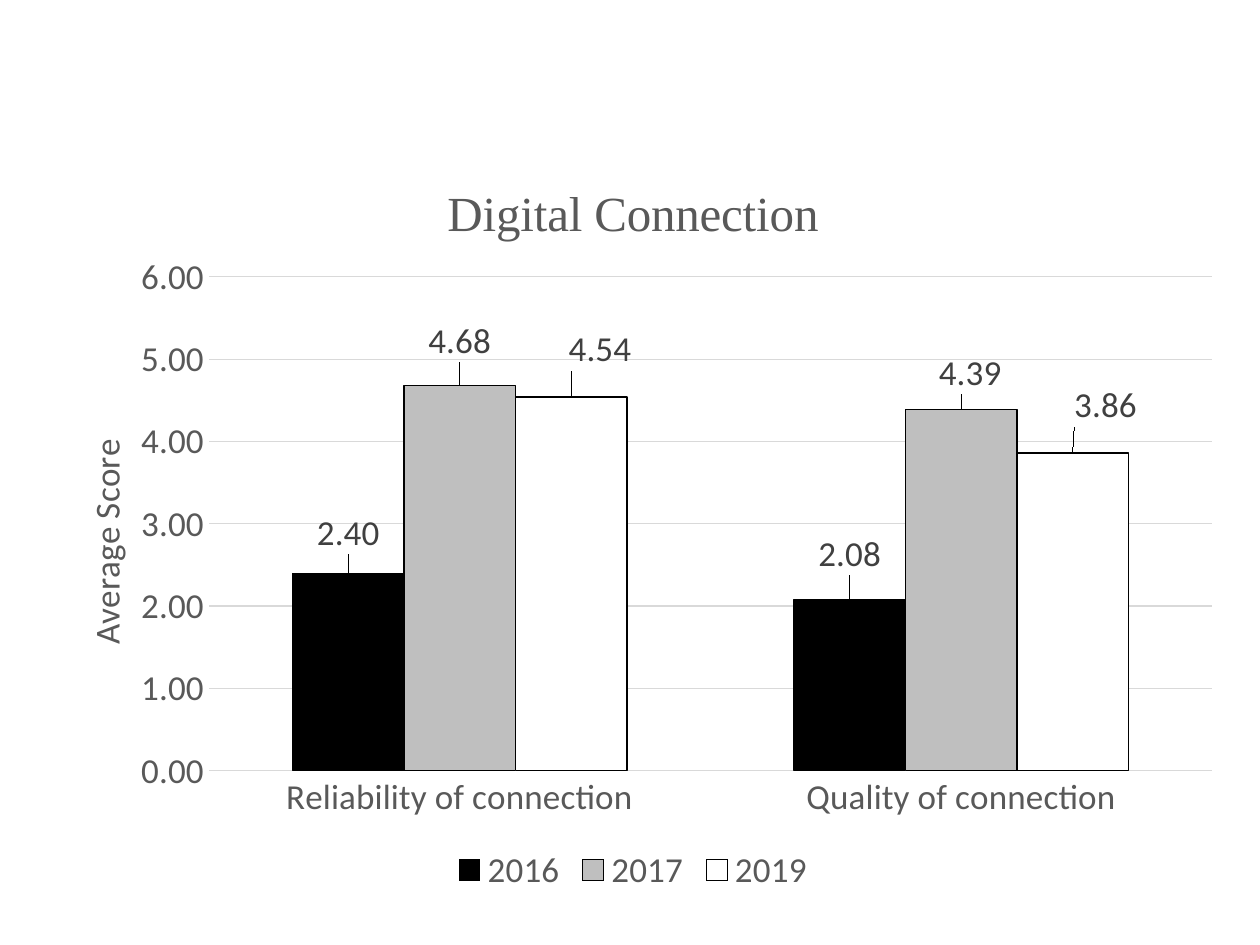
from dataclasses import dataclass

from pptx import Presentation
from pptx.chart.data import CategoryChartData
from pptx.dml.color import RGBColor
from pptx.enum.chart import XL_CHART_TYPE as ChartType
from pptx.enum.chart import XL_LABEL_POSITION as LabelPosition
from pptx.enum.chart import XL_LEGEND_POSITION as LegendPosition
from pptx.enum.chart import XL_TICK_MARK as TickMark
from pptx.oxml import parse_xml
from pptx.oxml.ns import nsdecls, qn
from pptx.util import Pt

PX = 914400 // 126


@dataclass(frozen=True)
class Theme:
    """Colours, fonts and type sizes of the slide."""
    text: str = "595959"
    label: str = "404040"
    grid: str = "D9D9D9"
    outline: str = "000000"
    bars: tuple = ("000000", "BFBFBF", "FFFFFF")
    body_font: str = "Calibri"
    title_font: str = "Times New Roman"
    body_size: int = 20
    title_size: int = 28
    line_width: float = 0.75


THEME = Theme()
CATEGORIES = ("Reliability of connection", "Quality of connection")
SCORES = {"2016": (2.40, 2.08), "2017": (4.68, 4.39), "2019": (4.54, 3.86)}
LABEL_SHIFTS = {
    "2016": ((0, -14), (0, -19)),
    "2017": ((0, -18), (9, -10)),
    "2019": ((29, -21), (33, -21)),
}


def style_font(font, color=THEME.text, size=THEME.body_size, name=THEME.body_font):
    """Give a font its regular weight, size, face and colour."""
    font.size, font.name, font.bold = Pt(size), name, False
    font.color.rgb = RGBColor.from_string(color)


def style_line(line, color):
    """Give a line its colour and the common width."""
    line.color.rgb = RGBColor.from_string(color)
    line.width = Pt(THEME.line_width)


def set_layout(part, index, box, left, top, size=None, inner=False):
    """Place a chart part by px lengths relative to the chart box."""
    for layout in part.findall(qn("c:layout")):
        part.remove(layout)
    width, height = box[2:]
    settings = [("layoutTarget", "inner")] if inner else []
    if part.tag != qn("c:dLbl"):
        settings += [("xMode", "edge"), ("yMode", "edge")]
    settings += [("x", round(left / width, 4)), ("y", round(top / height, 4))]
    if size:
        settings += [("w", round(size[0] / width, 4)), ("h", round(size[1] / height, 4))]
    body = "".join(f'<c:{key} val="{value}"/>' for key, value in settings)
    part.insert(index, parse_xml(
        f'<c:layout {nsdecls("c")}><c:manualLayout>{body}</c:manualLayout></c:layout>'))


def style_axes(chart, box):
    """Format both axes, the gridlines and the score title."""
    categories, scores = chart.category_axis, chart.value_axis
    for axis in (categories, scores):
        axis.major_tick_mark = axis.minor_tick_mark = TickMark.NONE
        axis.format.line.fill.background()
        style_font(axis.tick_labels.font)
    scores.minimum_scale, scores.maximum_scale, scores.major_unit = 0, 6, 1
    scores.tick_labels.number_format = "0.00"
    scores.tick_labels.number_format_is_linked = False
    style_line(scores.major_gridlines.format.line, THEME.grid)
    heading = scores.axis_title.text_frame
    heading.text = "Average Score"
    style_font(heading.paragraphs[0].font)
    set_layout(scores.axis_title._element, 1, box, 45, 281)


def style_series(series, color, shifts, box):
    """Format one year's bars and shift their value labels."""
    series.format.fill.solid()
    series.format.fill.fore_color.rgb = RGBColor.from_string(color)
    series.invert_if_negative = False
    style_line(series.format.line, THEME.outline)
    labels = series.data_labels
    labels.show_value = True
    labels.number_format, labels.number_format_is_linked = "0.00", False
    labels.position = LabelPosition.OUTSIDE_END
    style_font(labels.font, THEME.label)
    for index in range(len(shifts)):
        label = series.points[index].data_label
        style_font(label.font, THEME.label)
        label.position = LabelPosition.OUTSIDE_END
    for label, shift in zip(series._element.xpath(".//c:dLbl"), shifts):
        set_layout(label, 1, box, *shift)


def add_score_chart(slide, box):
    """Add the clustered column chart of yearly scores in the given box."""
    data = CategoryChartData(number_format="0.00")
    data.categories = CATEGORIES
    for year, scores in SCORES.items():
        data.add_series(year, scores)
    chart = slide.shapes.add_chart(
        ChartType.COLUMN_CLUSTERED, *(length * PX for length in box), data).chart
    style_font(chart.font)
    chart.has_title = True
    heading = chart.chart_title.text_frame
    heading.text = "Digital Connection"
    style_font(heading.paragraphs[0].font, size=THEME.title_size, name=THEME.title_font)
    chart.chart_title.include_in_layout = False
    chart.has_legend = True
    chart.legend.position = LegendPosition.BOTTOM
    chart.legend.include_in_layout = False
    style_font(chart.legend.font)
    plot = chart.plots[0]
    plot.gap_width, plot.overlap, plot.vary_by_categories = 150, 0, False
    style_axes(chart, box)
    for series, color in zip(plot.series, THEME.bars):
        style_series(series, color, LABEL_SHIFTS[series.name], box)
    plot_area = chart._chartSpace.chart.plotArea
    set_layout(plot_area, 0, box, 179, 125, size=(1003, 494), inner=True)


def main():
    """Build the slide and save it."""
    deck = Presentation()
    deck.slide_width, deck.slide_height = 1260 * PX, 945 * PX
    slide = deck.slides.add_slide(deck.slide_layouts[6])
    add_score_chart(slide, (30, 152, 1206, 747))
    deck.save("out.pptx")


if __name__ == "__main__":
    main()
